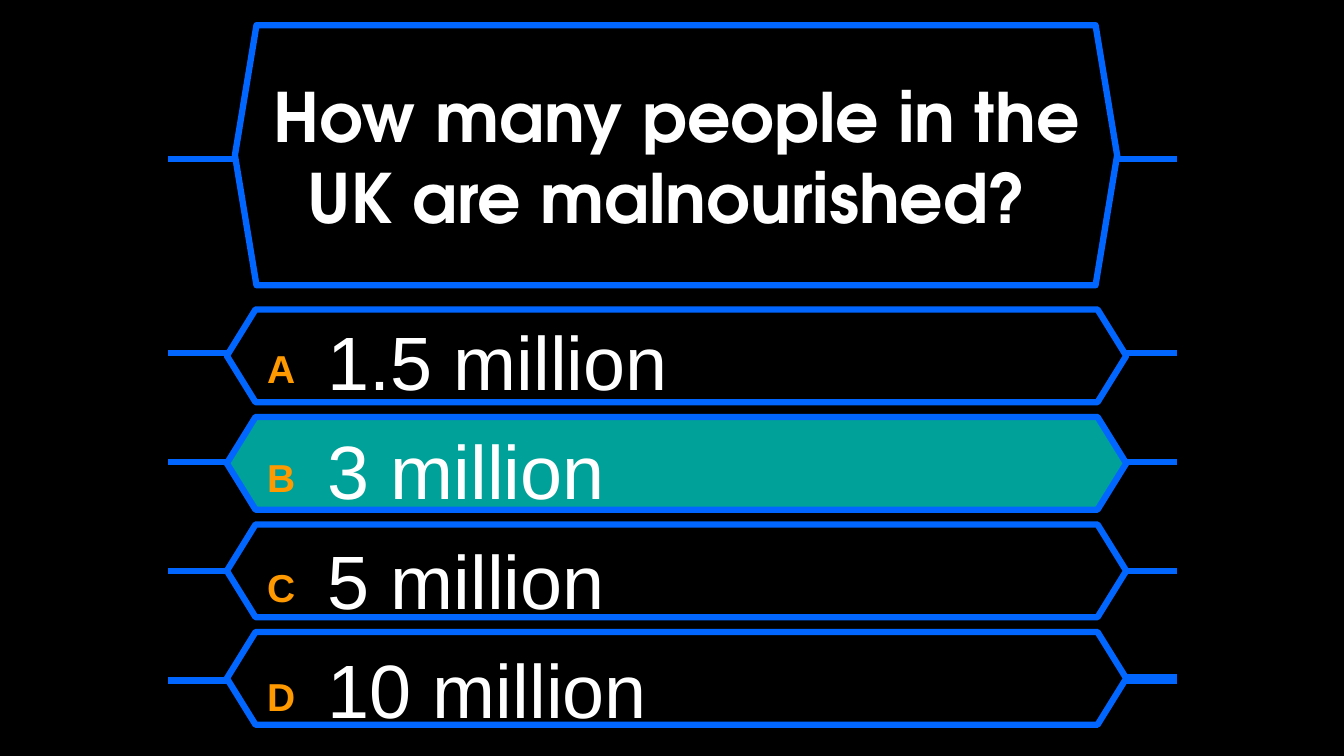
from dataclasses import dataclass

from lxml.etree import SubElement
from pptx import Presentation
from pptx.dml.color import RGBColor
from pptx.enum.shapes import MSO_CONNECTOR, MSO_SHAPE
from pptx.enum.text import MSO_ANCHOR, PP_ALIGN
from pptx.oxml.ns import qn
from pptx.util import Inches, Pt


@dataclass(frozen=True)
class Theme:
    black: RGBColor = RGBColor.from_string("000000")
    white: RGBColor = RGBColor.from_string("FFFFFF")
    blue: RGBColor = RGBColor.from_string("0066FF")
    teal: RGBColor = RGBColor.from_string("00A198")
    orange: RGBColor = RGBColor.from_string("FF9900")
    question_font: str = "TeX Gyre Adventor"
    answer_font: str = "Arial"
    question_size: float = 48.6
    letter_size: float = 48
    answer_size: float = 54
    answer_gap: float = 13.45
    outline: float = 4.5


class QuizSlide:
    def __init__(self, deck, theme):
        self.theme = theme
        self.page = deck.slides.add_slide(deck.slide_layouts[6])
        background = self.page.background.fill
        background.solid()
        background.fore_color.rgb = theme.black

    def outline(self, line):
        line.color.rgb = self.theme.blue
        line.width = Pt(self.theme.outline)

    def hexagon(self, left, top, width, height, slant, color):
        panel = self.page.shapes.add_shape(
            MSO_SHAPE.HEXAGON, Inches(left), Inches(top), Inches(width), Inches(height)
        )
        panel.adjustments[0] = slant
        panel.shadow.inherit = False
        panel.fill.solid()
        panel.fill.fore_color.rgb = color
        self.outline(panel.line)

    def connector(self, start, end, height):
        wire = self.page.shapes.add_connector(
            MSO_CONNECTOR.STRAIGHT, Inches(start), Inches(height), Inches(end), Inches(height)
        )
        self.outline(wire.line)
        SubElement(wire.element.spPr, qn("a:effectLst"))

    def text_box(self, left, top, width, height, anchor):
        box = self.page.shapes.add_textbox(
            Inches(left), Inches(top), Inches(width), Inches(height)
        )
        frame = box.text_frame
        frame.word_wrap = True
        frame.vertical_anchor = anchor
        frame.margin_left = frame.margin_right = 0
        frame.margin_top = frame.margin_bottom = 0
        return frame

    def style(self, span, font, size, color, bold):
        span.font.name = font
        span.font.size = Pt(size)
        span.font.color.rgb = color
        span.font.bold = bold

    def question(self, text):
        frame = self.text_box(2.5, 0.42, 8.42, 2.25, MSO_ANCHOR.MIDDLE)
        frame.text = text
        para = frame.paragraphs[0]
        para.alignment = PP_ALIGN.CENTER
        theme = self.theme
        self.style(para.runs[0], theme.question_font, theme.question_size, theme.white, True)

    def answers(self, choices):
        theme = self.theme
        frame = self.text_box(2.65, 3.12, 8.33, 4.25, MSO_ANCHOR.TOP)
        for index, (letter, answer) in enumerate(choices):
            para = frame.add_paragraph() if index else frame.paragraphs[0]
            para.space_before = Pt(theme.answer_gap if index else 0)
            properties = para._p.get_or_add_pPr()
            properties.set("marL", str(Inches(0.6)))
            properties.set("indent", str(Inches(-0.6)))
            label = para.add_run()
            label.text = letter
            self.style(label, theme.answer_font, theme.letter_size, theme.orange, True)
            label.font._element.set("baseline", "10000")
            span = para.add_run()
            span.text = "\t" + answer
            self.style(span, theme.answer_font, theme.answer_size, theme.white, False)


def main():
    deck = Presentation()
    deck.slide_width = Inches(13.33)
    deck.slide_height = Inches(7.5)
    theme = Theme()
    quiz = QuizSlide(deck, theme)

    choices = [
        ("A", "1.5 million"),
        ("B", "3 million"),
        ("C", "5 million"),
        ("D", "10 million"),
    ]
    highlighted = "B"

    quiz.hexagon(2.33, 0.25, 8.75, 2.58, 0.083, theme.black)
    quiz.connector(2.33, 1.67, 1.58)
    quiz.connector(11.67, 11.08, 1.58)

    for index, (letter, answer) in enumerate(choices):
        color = theme.teal if letter == highlighted else theme.black
        quiz.hexagon(2.25, 3.07 + 3.2 * index / 3, 8.92, 0.92, 0.309, color)
        height = 3.5 + 3.25 * index / 3
        quiz.connector(2.25, 1.67, height)
        quiz.connector(11.67, 11.17, height)
    quiz.connector(11.67, 11.17, 6.72)

    quiz.question("How many people in the UK are malnourished? ")
    quiz.answers(choices)
    deck.save("out.pptx")


if __name__ == "__main__":
    main()
